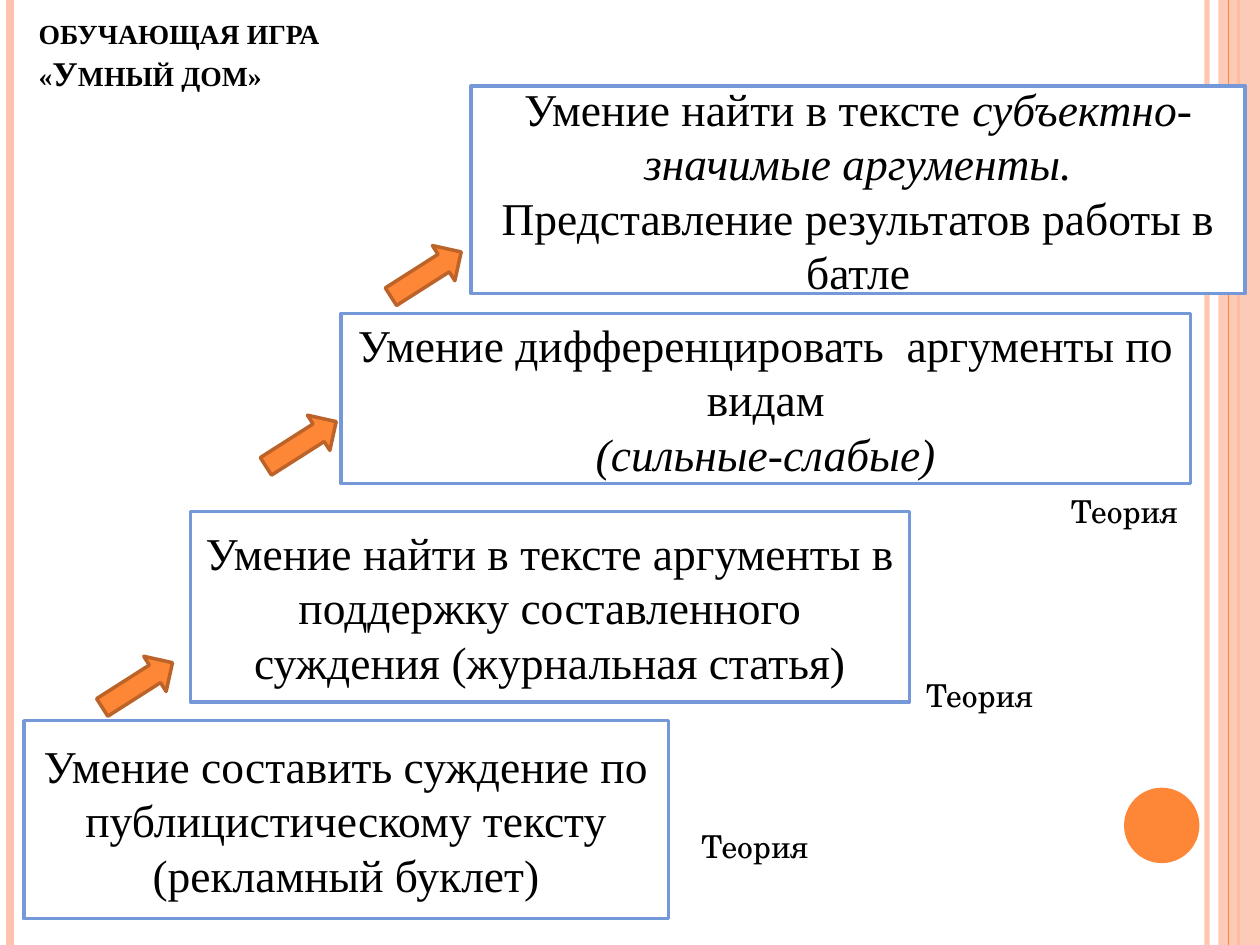
from lxml import etree
from pptx import Presentation
from pptx.dml.color import RGBColor
from pptx.enum.shapes import MSO_CONNECTOR, MSO_SHAPE
from pptx.enum.text import MSO_ANCHOR, MSO_AUTO_SIZE, PP_ALIGN
from pptx.oxml.ns import qn
from pptx.util import Cm, Pt

STRAIGHT = MSO_CONNECTOR.STRAIGHT
RECTANGLE, OVAL, ARROW = MSO_SHAPE.RECTANGLE, MSO_SHAPE.OVAL, MSO_SHAPE.RIGHT_ARROW
TOP, MIDDLE = MSO_ANCHOR.TOP, MSO_ANCHOR.MIDDLE
CENTER = PP_ALIGN.CENTER
FIT_SHAPE = MSO_AUTO_SIZE.SHAPE_TO_FIT_TEXT

WHITE = RGBColor(0xFF, 0xFF, 0xFF)
BLACK = RGBColor(0x00, 0x00, 0x00)
PEACH = RGBColor(0xFE, 0xC3, 0xAE)
ORANGE = RGBColor(0xFE, 0x86, 0x37)
BROWN = RGBColor(0xBC, 0x63, 0x29)
BLUE = RGBColor(0x75, 0x98, 0xD9)

SERIF = "Times New Roman"
SCHOOL = "TeX Gyre Schola"
WIDTH, HEIGHT = 25.4, 19.05
LINE_FACTOR = 1.2

# Left, top, width, height in cm; paragraphs of (text, italic) runs
STEPS = [
    ((0.48, 14.53, 13, 3.99),
     [[("Умение составить суждение по публицистическому тексту (рекламный буклет)", False)]]),
    ((3.84, 10.31, 14.5, 3.84),
     [[("Умение найти в тексте аргументы в поддержку составленного суждения "
        "(журнальная статья)", False)]]),
    ((6.88, 6.32, 17.12, 3.43),
     [[("Умение дифференцировать  аргументы по видам", False)],
      [("(сильные-слабые)", True)]]),
    ((9.5, 1.73, 15.6, 4.19),
     [[("Умение найти в тексте ", False), ("субъектно-значимые аргументы.", True)],
      [("Представление результатов работы в батле", False)]]),
]
ARROWS = [(1.93, 13.39), (5.23, 8.53), (7.75, 5.11)]
THEORY_LABELS = [(13.89, 16.54), (18.42, 13.51), (21.34, 9.8)]


def set_opacity(colored, percent):
    color = next(colored.iter(qn("a:srgbClr")))
    etree.SubElement(color, qn("a:alpha")).set("val", str(percent * 1000))


def set_font(paragraph, name, size):
    font = paragraph.font
    font.name, font.size = name, Pt(size)
    font.color.rgb = BLACK


def add_stripe(slide, x, color, width, opacity=100):
    stripe = slide.shapes.add_connector(STRAIGHT, Cm(x), 0, Cm(x), Cm(HEIGHT))
    stripe.line.color.rgb = color
    stripe.line.width = Pt(width)
    properties = stripe.line._get_or_add_ln().getparent()
    etree.SubElement(properties, qn("a:effectLst"))
    if opacity < 100:
        set_opacity(properties, opacity)


def add_figure(slide, kind, box, fill, outline=None):
    shape = slide.shapes.add_shape(kind, *map(Cm, box))
    shape.shadow.inherit = False
    shape.fill.solid()
    shape.fill.fore_color.rgb = fill
    if outline is None:
        shape.line.fill.background()
    else:
        shape.line.color.rgb = outline
        shape.line.width = Pt(2)
    return shape


def add_step(slide, box, paragraphs):
    frame = add_figure(slide, RECTANGLE, box, WHITE, BLUE).text_frame
    frame.word_wrap = True
    frame.vertical_anchor = MIDDLE
    for index, runs in enumerate(paragraphs):
        paragraph = frame.add_paragraph() if index else frame.paragraphs[0]
        paragraph.alignment = CENTER
        paragraph.line_spacing = Pt(26 * LINE_FACTOR)
        set_font(paragraph, SERIF, 26)
        for text, italic in runs:
            run = paragraph.add_run()
            run.text = text
            run.font.italic = italic


def add_title(slide):
    frame = slide.shapes.add_textbox(Cm(0.53), Cm(0.2), Cm(10.06), Cm(1.9)).text_frame
    frame.word_wrap = True
    frame.vertical_anchor = TOP
    frame.margin_top = frame.margin_bottom = 0
    paragraph = frame.paragraphs[0]
    paragraph.text = "обучающая игра\v«Умный дом»"
    paragraph.line_spacing = Pt(19.8 * LINE_FACTOR)
    set_font(paragraph, SERIF, 19.8)
    paragraph.font.bold = True
    for run in paragraph.runs:
        run._r.get_or_add_rPr().set("cap", "small")


def add_theory_label(slide, left, top):
    frame = slide.shapes.add_textbox(Cm(left), Cm(top), Cm(2.72), Cm(1.02)).text_frame
    frame.word_wrap = False
    frame.auto_size = FIT_SHAPE
    paragraph = frame.paragraphs[0]
    paragraph.text = "Теория"
    set_font(paragraph, SCHOOL, 18)


def add_decoration(slide):
    add_stripe(slide, 24.33, PEACH, 3, 93)
    add_stripe(slide, 0.2, PEACH, 4.5)
    add_stripe(slide, 24.97, ORANGE, 1.5)
    band = add_figure(slide, RECTANGLE, (24.56, 0, 0.84, HEIGHT), PEACH)
    set_opacity(band._element.spPr, 87)
    add_stripe(slide, 24.77, ORANGE, 0.75)
    add_figure(slide, OVAL, (22.66, 15.88, 1.52, 1.52), ORANGE)


def main():
    presentation = Presentation()
    presentation.slide_width, presentation.slide_height = Cm(WIDTH), Cm(HEIGHT)
    slide = presentation.slides.add_slide(presentation.slide_layouts[6])

    # Side stripes and circle
    add_decoration(slide)

    # Heading and staircase of skills
    add_title(slide)
    for box, paragraphs in STEPS:
        add_step(slide, box, paragraphs)

    # Arrows from step to step
    for left, top in ARROWS:
        arrow = add_figure(slide, ARROW, (left, top, 1.68, 0.84), ORANGE, BROWN)
        arrow.rotation = 327.5

    # Labels beside the steps
    for left, top in THEORY_LABELS:
        add_theory_label(slide, left, top)

    presentation.save("out.pptx")


if __name__ == "__main__":
    main()
